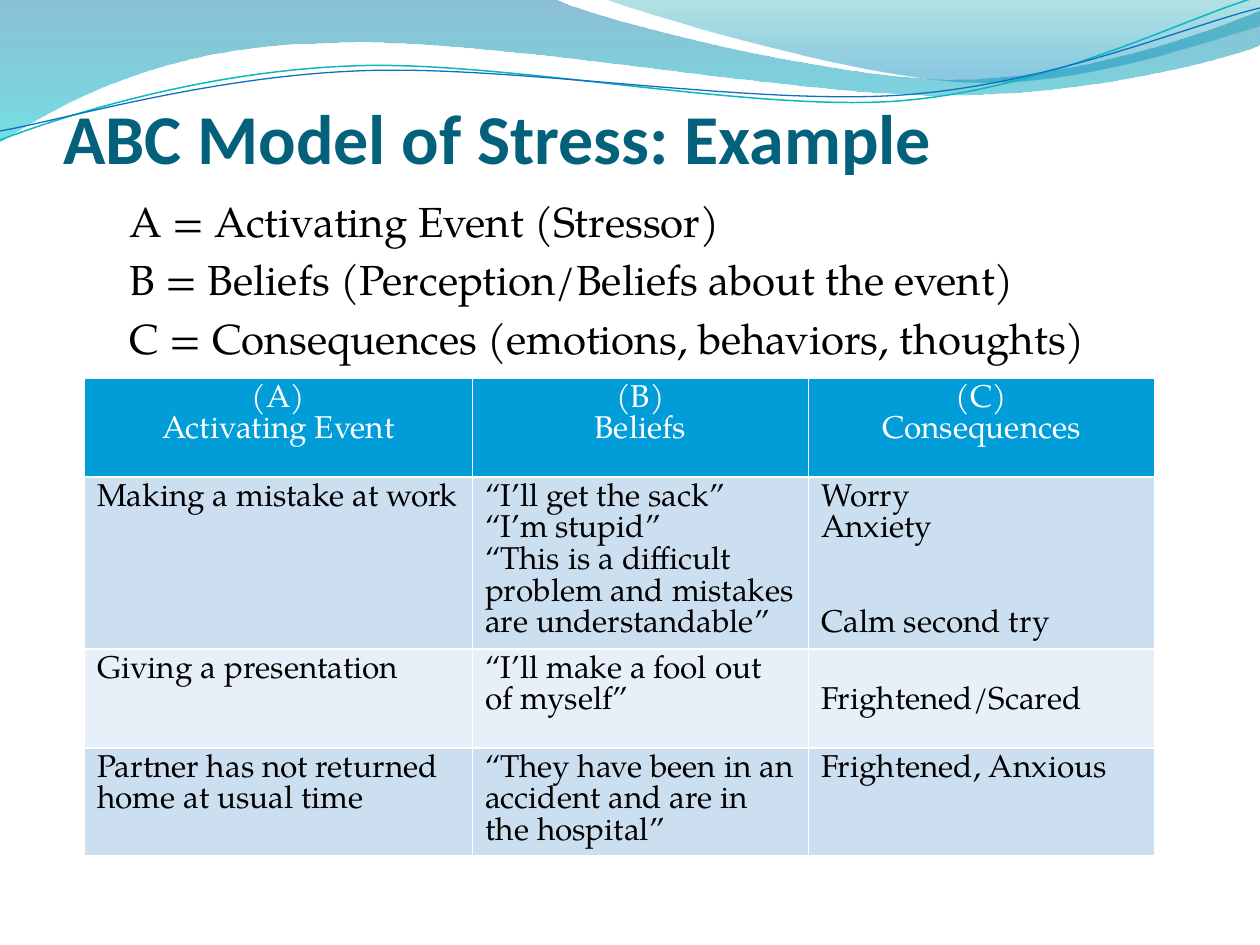
from dataclasses import dataclass
from typing import NamedTuple

from lxml.etree import SubElement
from pptx import Presentation
from pptx.dml.color import RGBColor
from pptx.enum.text import MSO_ANCHOR, MSO_AUTO_SIZE, PP_ALIGN
from pptx.oxml.ns import qn
from pptx.util import Emu, Pt

EMU_PER_PX = 914400 / 126
COLORS = {
    "title": "04617B", "text": "000000", "white": "FFFFFF",
    "header": "009DD9", "band": "CCDFF1", "light": "E7EFF8",
}
HEADING_FONT, BODY_FONT = "Calibri", "TeX Gyre Pagella"


class Stop(NamedTuple):
    position: float
    color: str
    opacity: int


@dataclass
class Wave:
    """Steps of two numbers are straight lines; steps of six are cubic curves."""
    start: tuple[int, int]
    steps: list[tuple[int, ...]]
    stops: tuple[Stop, ...] = ()
    line_color: str = ""
    line_width: float = 0


class Entry(NamedTuple):
    text: str
    lines_above: int = 0


WAVES = [
    Wave((0, 0), [(554, -1), (600, 21, 837, 79, 955, 79), (1075, 79, 1207, 33, 1260, 11),
                  (1261, 45), (1239, 55, 1096, 96, 940, 95), (784, 95, 481, 35, 324, 43),
                  (163, 45, 58, 105, -1, 142), (0, 0)],
         stops=(Stop(0, "0074A1", 45), Stop(1, "00C6CF", 55))),
    Wave((604, -1), [(642, 14, 859, 78, 969, 82), (1079, 87, 1211, 40, 1260, 26),
                     (1260, 0), (604, -1)],
         stops=(Stop(0, "00A1A9", 30), Stop(0.8, "008BBF", 45))),
    Wave((0, 140), [(60, 117, 199, 72, 349, 66), (498, 59, 747, 112, 898, 101),
                    (1050, 89, 1182, 19, 1257, -3)], line_color="0AB8BF", line_width=0.85),
    Wave((0, 131), [(59, 121, 207, 77, 357, 71), (508, 64, 752, 106, 903, 95),
                    (1053, 84, 1186, 26, 1260, 8)], line_color="0F6FC6", line_width=0.75),
]
DEFINITIONS = [
    "A = Activating Event (Stressor)",
    "B = Beliefs (Perception/Beliefs about the event)",
    "C = Consequences (emotions, behaviors, thoughts)",
]
COLUMN_WIDTHS = [388, 336, 346]
ROW_HEIGHTS = [99, 172, 99, 108]
CELL_LINE = 18.1
EXAMPLES = [
    [[Entry("(A)"), Entry("Activating Event")],
     [Entry("(B)"), Entry("Beliefs")],
     [Entry("(C)"), Entry("Consequences")]],
    [[Entry("Making a mistake at work")],
     [Entry("“I’ll get the sack”"), Entry("“I’m stupid”"),
      Entry("“This is a difficult problem and mistakes are understandable”")],
     [Entry("Worry"), Entry("Anxiety"), Entry("Calm second try", 2)]],
    [[Entry("Giving a presentation")],
     [Entry("“I’ll make a fool out of myself”")],
     [Entry("Frightened/Scared", 1)]],
    [[Entry("Partner has not returned home at usual time")],
     [Entry("“They have been in an accident and are in the hospital”")],
     [Entry("Frightened, Anxious")]],
]


def px(length: float) -> Emu:
    return Emu(round(length * EMU_PER_PX))


def rgb(value: str) -> RGBColor:
    return RGBColor.from_string(value)


def set_all(target, **values) -> None:
    for attribute, value in values.items():
        setattr(target, attribute, value)


def add_text(paragraph, text: str, font: str, size: int, color: str, bold: bool = False) -> None:
    run = paragraph.add_run()
    run.text = text
    set_all(run.font, name=font, size=Pt(size), bold=bold)
    run.font.color.rgb = rgb(COLORS[color])


def bend_segments(shape, wave: Wave) -> None:
    """Join the three straight segments through each curve's points into one cubic."""
    segments = iter(list(shape.element.iter(qn("a:lnTo"))))
    for step in wave.steps:
        segment = next(segments)
        if len(step) == 6:
            segment.tag = qn("a:cubicBezTo")
            for _ in range(2):
                absorbed = next(segments)
                segment.append(absorbed[0])
                absorbed.getparent().remove(absorbed)


def draw_wave(slide, wave: Wave) -> None:
    builder = slide.shapes.build_freeform(px(wave.start[0]), px(wave.start[1]))
    points = [(px(x), px(y)) for step in wave.steps for x, y in zip(step[::2], step[1::2])]
    builder.add_line_segments(points, close=bool(wave.stops))
    shape = builder.convert_to_shape()
    bend_segments(shape, wave)
    shape.shadow.inherit = False
    if not wave.stops:
        shape.fill.background()
        shape.line.color.rgb = rgb(wave.line_color)
        shape.line.width = Pt(wave.line_width)
        return
    shape.line.fill.background()
    shape.fill.gradient()
    shape.fill.gradient_angle = 270
    for gradient_stop, stop in zip(shape.fill.gradient_stops, wave.stops):
        gradient_stop.position = stop.position
        gradient_stop.color.rgb = rgb(stop.color)
    color_elements = list(shape.element.spPr.iter(qn("a:srgbClr")))
    for element, stop in zip(color_elements, wave.stops):
        SubElement(element, qn("a:alpha"), val=str(stop.opacity * 1000))


def draw_title(slide, text: str) -> None:
    title = slide.shapes.title
    set_all(title, left=px(63), top=px(21), width=px(1134), height=px(158))
    frame = title.text_frame
    set_all(frame, margin_left=0, margin_right=0, margin_top=px(6), margin_bottom=0,
            vertical_anchor=MSO_ANCHOR.BOTTOM, auto_size=MSO_AUTO_SIZE.NONE)
    frame.paragraphs[0].alignment = PP_ALIGN.LEFT
    add_text(frame.paragraphs[0], text, HEADING_FONT, 40, "title", bold=True)


def draw_definitions(slide) -> None:
    frame = slide.shapes.add_textbox(px(63), px(189), px(1134), px(605)).text_frame
    frame.word_wrap = True
    for index, definition in enumerate(DEFINITIONS):
        paragraph = frame.add_paragraph() if index else frame.paragraphs[0]
        set_all(paragraph, space_before=Pt(4.8), alignment=PP_ALIGN.LEFT)
        paragraph._p.get_or_add_pPr().set("marL", str(px(54)))
        add_text(paragraph, definition, BODY_FONT, 24, "text")


def fill_cell(cell, entries: list[Entry], row: int) -> None:
    is_header = row == 0
    cell.fill.solid()
    fill = "header" if is_header else "band" if row % 2 else "light"
    cell.fill.fore_color.rgb = rgb(COLORS[fill])
    cell.margin_top = Pt(3.6 + CELL_LINE * entries[0].lines_above)
    for index, entry in enumerate(entries):
        paragraph = cell.text_frame.add_paragraph() if index else cell.text_frame.paragraphs[0]
        set_all(paragraph, line_spacing=Pt(CELL_LINE),
                alignment=PP_ALIGN.CENTER if is_header else PP_ALIGN.LEFT)
        if index:
            paragraph.space_before = Pt(CELL_LINE * entry.lines_above)
        add_text(paragraph, entry.text, BODY_FONT, 18, "white" if is_header else "text")


def draw_examples(slide) -> None:
    table = slide.shapes.add_table(len(ROW_HEIGHTS), len(COLUMN_WIDTHS), px(84.5), px(378),
                                   px(sum(COLUMN_WIDTHS)), px(sum(ROW_HEIGHTS))).table
    for column, width in zip(table.columns, COLUMN_WIDTHS):
        column.width = px(width)
    for row, (height, cells) in enumerate(zip(ROW_HEIGHTS, EXAMPLES)):
        table.rows[row].height = px(height)
        for column, entries in enumerate(cells):
            fill_cell(table.cell(row, column), entries, row)


def main() -> None:
    deck = Presentation()
    set_all(deck, slide_width=px(1260), slide_height=px(945))
    slide = deck.slides.add_slide(deck.slide_layouts.get_by_name("Title Only"))
    for wave in WAVES:
        draw_wave(slide, wave)
    draw_title(slide, "ABC Model of Stress: Example")
    draw_definitions(slide)
    draw_examples(slide)
    deck.save("out.pptx")


if __name__ == "__main__":
    main()
